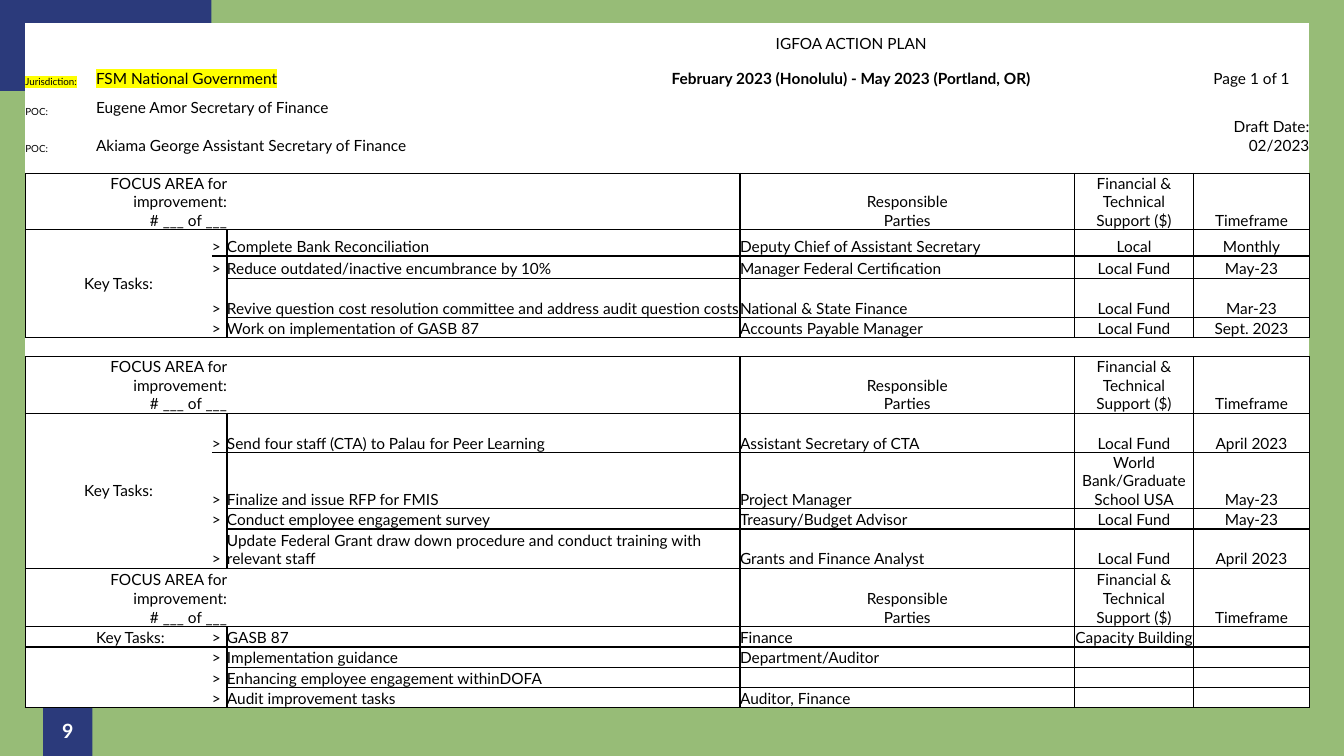
from lxml import etree
from pptx import Presentation
from pptx.dml import color
from pptx.enum import shapes, text
from pptx.oxml import ns
from pptx.util import Cm, Pt

FONT = "Lato"
GREEN, NAVY, WHITE, BLACK, YELLOW = "97BC77", "2B3A7B", "FFFFFF", "000000", "FFFF00"
NO_STYLE = "{2D5ABB26-0587-4C30-8999-92F81FD0307C}"
LEFT, CENTER, RIGHT = text.PP_ALIGN.LEFT, text.PP_ALIGN.CENTER, text.PP_ALIGN.RIGHT

COLUMN_WIDTHS = [1.78, 2.92, 0.38, 8.43, 1.68, 1.63, 1.19, 8.43, 3, 2.92]
ROW_HEIGHTS = [0.74, 0.89, 0.74, 0.94, 0.48,
               1.42, 0.66, 0.56, 0.99, 0.51, 0.48,
               1.42, 0.99, 1.42, 0.51, 0.99,
               1.47, 0.51, 0.51, 0.51, 0.51]

# row, first column, last column, text, alignment, options
HEADING = [
    (0, 5, 7, "IGFOA ACTION PLAN", CENTER, {}),
    (1, 0, 0, "Jurisdiction:", LEFT, {"size": 7, "highlight": YELLOW}),
    (1, 1, 3, "FSM National Government", LEFT, {"underline": True, "highlight": YELLOW}),
    (1, 5, 7, "February 2023 (Honolulu) - May 2023 (Portland, OR)", CENTER, {"bold": True}),
    (1, 9, 9, "Page 1 of 1", CENTER, {}),
    (2, 0, 0, "POC:", LEFT, {"size": 7}),
    (2, 1, 3, "Eugene Amor Secretary of Finance", LEFT, {}),
    (3, 0, 0, "POC:", LEFT, {"size": 7}),
    (3, 1, 4, "Akiama George Assistant Secretary of Finance", LEFT, {}),
    (3, 9, 9, "Draft Date: 02/2023", RIGHT, {}),
]

# first row of each focus area and its tasks: task, responsible, support, timeframe
FOCUS_AREAS = [
    (5, [
        ("Complete Bank Reconciliation", "Deputy Chief of Assistant Secretary", "Local", "Monthly"),
        ("Reduce outdated/inactive encumbrance by 10%", "Manager Federal Certification",
         "Local Fund", "May-23"),
        ("Revive question cost resolution committee and address audit question costs",
         "National & State Finance", "Local Fund", "Mar-23"),
        ("Work on implementation of GASB 87", "Accounts Payable Manager",
         "Local Fund", "Sept. 2023"),
    ]),
    (11, [
        ("Send four staff (CTA) to Palau for Peer Learning", "Assistant Secretary of CTA",
         "Local Fund", "April 2023"),
        ("Finalize and issue RFP for FMIS", "Project Manager",
         "World Bank/Graduate School USA", "May-23"),
        ("Conduct employee engagement survey", "Treasury/Budget Advisor",
         "Local Fund", "May-23"),
        ("Update Federal Grant draw down procedure and conduct training with relevant staff",
         "Grants and Finance Analyst", "Local Fund", "April 2023"),
    ]),
    (16, [
        ("GASB 87", "Finance", "Capacity Building", ""),
        ("Implementation guidance", "Department/Auditor", "", ""),
        ("Enhancing employee engagement withinDOFA", "", "", ""),
        ("Audit improvement tasks", "Auditor, Finance", "", ""),
    ]),
]


def rgb(value):
    return color.RGBColor.from_string(value)


def add_block(slide, left, top, width, height):
    block = slide.shapes.add_shape(shapes.MSO_SHAPE.RECTANGLE,
                                   Cm(left), Cm(top), Cm(width), Cm(height))
    block.shadow.inherit = False
    block.fill.solid()
    block.fill.fore_color.rgb = rgb(NAVY)
    block.line.fill.background()
    return block


def format_run(run, size=11, ink=BLACK, bold=False, underline=False, highlight=None):
    font = run.font
    font.name, font.size, font.bold = FONT, Pt(size), bold
    font.color.rgb = rgb(ink)
    if underline:
        font.underline = True
    if highlight:
        marker = etree.Element(ns.qn("a:highlight"))
        etree.SubElement(marker, ns.qn("a:srgbClr"), val=highlight)
        font.fill._xPr.find(ns.qn("a:latin")).addprevious(marker)


def add_borders(cell, sides):
    """Draw thin black lines on the sides named by letters of LRTB."""
    properties = cell._tc.get_or_add_tcPr()
    for position, side in enumerate(s for s in "LRTB" if s in sides):
        line = etree.Element(ns.qn("a:ln" + side), w=str(Pt(1)))
        fill = etree.SubElement(line, ns.qn("a:solidFill"))
        etree.SubElement(fill, ns.qn("a:srgbClr"), val=BLACK)
        properties.insert(position, line)


def put(table, row, first, last, words="", align=LEFT, sides="", last_row=None, **options):
    """Fill one cell, merged over the given columns and rows."""
    last_row = last_row or row
    cell = table.cell(row, first)
    if (row, first) != (last_row, last):
        cell.merge(table.cell(last_row, last))
    for r in range(row, last_row + 1):
        for c in range(first, last + 1):
            add_borders(table.cell(r, c), sides)
    if words:
        cell.text_frame.text = words
        for paragraph in cell.text_frame.paragraphs:
            paragraph.alignment = align
            for run in paragraph.runs:
                format_run(run, **options)


def add_plan_table(slide):
    frame = slide.shapes.add_table(len(ROW_HEIGHTS), len(COLUMN_WIDTHS), Cm(0.64), Cm(0.58),
                                   Cm(sum(COLUMN_WIDTHS)), Cm(sum(ROW_HEIGHTS)))
    table = frame.table
    table.first_row = table.horz_banding = False
    table._tbl.tblPr.find(ns.qn("a:tableStyleId")).text = NO_STYLE
    for column, width in zip(table.columns, COLUMN_WIDTHS):
        column.width = Cm(width)
    for row, height in zip(table.rows, ROW_HEIGHTS):
        row.height = Cm(height)
    for cell in table.iter_cells():
        cell.margin_left = cell.margin_right = cell.margin_top = cell.margin_bottom = 0
        cell.vertical_anchor = text.MSO_ANCHOR.BOTTOM
        cell.fill.solid()
        cell.fill.fore_color.rgb = rgb(WHITE)
        end = etree.SubElement(cell.text_frame.paragraphs[0]._p, ns.qn("a:endParaRPr"))
        end.set("sz", "700")
    return table


def add_focus_area(table, top, tasks):
    put(table, top, 0, 2, "FOCUS AREA for improvement:\v# ___ of ___", RIGHT, "LTB")
    put(table, top, 3, 6, sides="RTB")
    titles = ("Responsible\vParties", "Financial &\vTechnical\vSupport ($)", "Timeframe")
    for column, title in enumerate(titles, 7):
        put(table, top, column, column, title, CENTER, "LRTB")

    start, end = top + 1, top + len(tasks)
    if tasks[-1][-1]:
        put(table, start, 0, 1, "Key Tasks:", CENTER, "LTB", last_row=end)
        table.cell(start, 0).vertical_anchor = text.MSO_ANCHOR.MIDDLE
    else:
        put(table, start, 1, 1, "Key Tasks:", sides="T")
        put(table, end, 1, 1, sides="B")
        for row in range(start, end + 1):
            put(table, row, 0, 0, sides="LT" if row == start else "LB" if row == end else "L")

    for row, (task, party, support, timeframe) in enumerate(tasks, start):
        edge = "T" if row == start else "B" if row == end else ""
        put(table, row, 2, 2, ">", sides="R" + edge)
        put(table, row, 3, 6, task, sides="LRTB")
        put(table, row, 7, 7, party, sides="LRTB")
        put(table, row, 8, 8, support, CENTER, "LRTB")
        put(table, row, 9, 9, timeframe, CENTER, "LRTB")


def main():
    presentation = Presentation()
    presentation.slide_width, presentation.slide_height = Cm(33.87), Cm(19.05)
    slide = presentation.slides.add_slide(presentation.slide_layouts[6])
    slide.background.fill.solid()
    slide.background.fill.fore_color.rgb = rgb(GREEN)

    add_block(slide, 0, 0, 5.33, 2.29)
    page_number = add_block(slide, 1.09, 17.75, 1.24, 1.3)
    frame = page_number.text_frame
    frame.margin_left = frame.margin_right = 0
    frame.vertical_anchor = text.MSO_ANCHOR.MIDDLE
    frame.text = "9"
    frame.paragraphs[0].alignment = CENTER
    format_run(frame.paragraphs[0].runs[0], size=14, ink=WHITE, bold=True)

    table = add_plan_table(slide)
    for row, first, last, words, align, options in HEADING:
        put(table, row, first, last, words, align, **options)
    for top, tasks in FOCUS_AREAS:
        add_focus_area(table, top, tasks)
    presentation.save("out.pptx")


if __name__ == "__main__":
    main()
